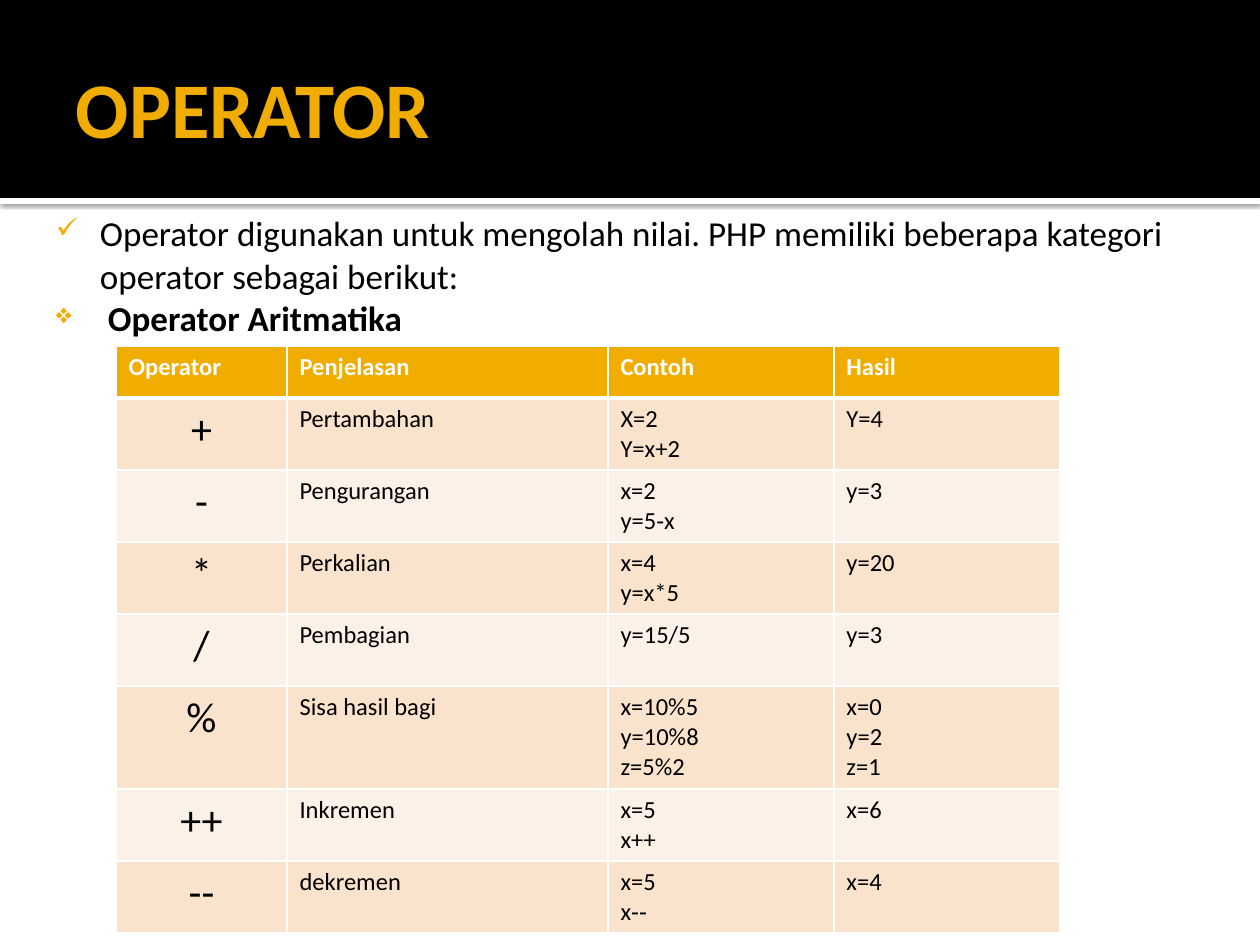
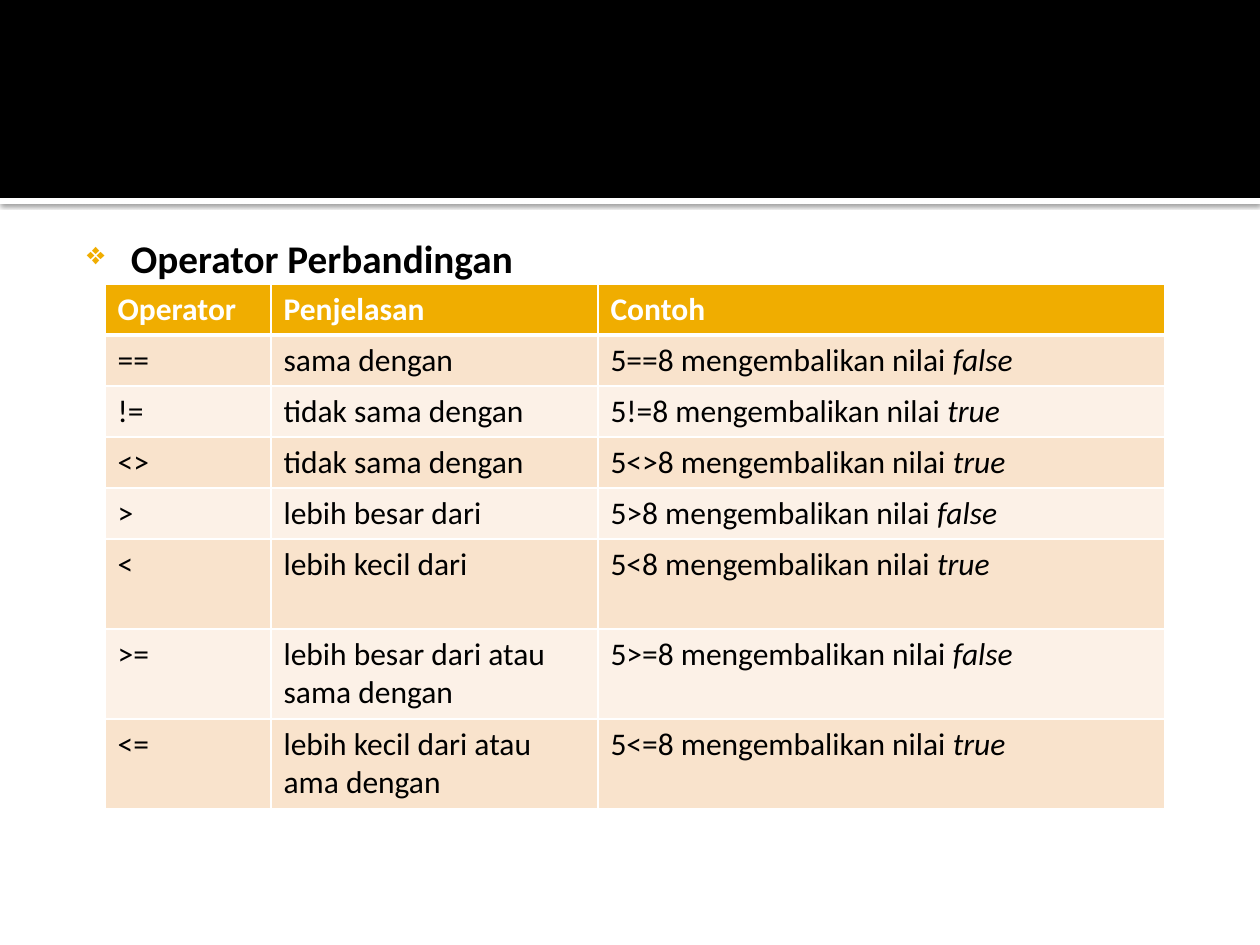
from lxml.etree import SubElement
from pptx import Presentation
from pptx.dml.color import RGBColor
from pptx.enum.shapes import MSO_SHAPE as Shape
from pptx.enum.text import MSO_ANCHOR as Anchor, PP_ALIGN as Align
from pptx.oxml import parse_xml
from pptx.oxml.ns import nsdecls, qn
from pptx.util import Pt

PX = 7257.14  # EMU in one px, 126 px to the inch
FONT = "Calibri"
GOLD, BLACK, WHITE = "F0AD00", "000000", "FFFFFF"
ROW_FILLS = ["F9E3CC", "FCF1E7"]

TITLE = "OPERATOR"
INTRO = ("Operator digunakan untuk mengolah nilai. PHP memiliki beberapa "
         "kategori operator sebagai berikut:")
ARITHMETIC_HEADING = " Operator Aritmatika"
ARITHMETIC = [
    ["Operator", "Penjelasan", "Contoh", "Hasil"],
    ["+", "Pertambahan", "X=2\nY=x+2", "Y=4"],
    ["-", "Pengurangan", "x=2\ny=5‐x", "y=3"],
    ["*", "Perkalian", "x=4\ny=x*5", "y=20"],
    ["/", "Pembagian", "y=15/5", "y=3"],
    ["%", "Sisa hasil bagi", "x=10%5\ny=10%8\nz=5%2", "x=0\ny=2\nz=1"],
    ["++", "Inkremen", "x=5\nx++", "x=6"],
    ["--", "dekremen", "x=5\nx‐‐", "x=4"],
]
ARITHMETIC_COLUMNS = [171, 321, 226, 226]
ARITHMETIC_ROWS = [52] + [72] * 4 + [103] + [72] * 2

COMPARISON_HEADING = "Operator Perbandingan"
COMPARISON_HEADER = ["Operator", "Penjelasan", "Contoh"]
COMPARISONS = [
    ("==", "sama dengan", "false"),
    ("!=", "tidak sama dengan", "true"),
    ("<>", "tidak sama dengan", "true"),
    (">", "lebih besar dari", "false"),
    ("<", "lebih kecil dari", "true"),
    (">=", "lebih besar dari atau\nsama dengan", "false"),
    ("<=", "lebih kecil dari atau\nama dengan", "true"),
]
COMPARISON_COLUMNS = [166, 327, 567]
COMPARISON_ROWS = [51] * 5 + [90] * 3


def px(length):
    return round(length * PX)


def color(hex_string):
    return RGBColor.from_string(hex_string)


def add_span(para, text, size, fill, bold=False, italic=False):
    span = para.add_run()
    span.text = text
    font = span.font
    font.name, font.size, font.bold, font.italic = FONT, Pt(size), bold, italic
    font.color.rgb = color(fill)


def set_insets(frame, left, top, right, bottom):
    frame.margin_left, frame.margin_top = px(left), px(top)
    frame.margin_right, frame.margin_bottom = px(right), px(bottom)


def add_bands(slide):
    """Draw the black header and the white strip under it, behind all else."""
    for top, height, fill in [(0, 198, BLACK), (198, 6, WHITE)]:
        band = slide.shapes.add_shape(Shape.RECTANGLE, 0, px(top), px(1260), px(height))
        band.shadow.inherit = False
        band.fill.solid()
        band.fill.fore_color.rgb = color(fill)
        band.line.fill.background()
        slide.shapes._spTree.insert(2, band._element)
    # the strip was drawn last, so it still is in "band"
    effects = band._element.spPr.find(qn("a:effectLst"))
    effects.append(parse_xml(
        f'<a:outerShdw {nsdecls("a")} blurRad="{Pt(2.5)}" dist="{Pt(0.8)}" dir="5400000" '
        f'rotWithShape="0"><a:srgbClr val="{BLACK}"><a:alpha val="60000"/></a:srgbClr>'
        '</a:outerShdw>'))


def set_title(slide, text):
    title = slide.shapes.title
    title.left, title.top, title.width, title.height = map(px, (63, 21, 1134, 173))
    frame = title.text_frame
    set_insets(frame, 13, 6, 6, 6)
    frame.vertical_anchor = Anchor.MIDDLE
    para = frame.paragraphs[0]
    para.alignment = Align.LEFT
    add_span(para, text, 45, GOLD, bold=True)


def set_bullet(para, mark):
    props = para._p.get_or_add_pPr()
    props.set("marL", str(px(60)))
    props.set("indent", str(px(-44)))
    bullet_color = SubElement(props, qn("a:buClr"))
    SubElement(bullet_color, qn("a:srgbClr"), val=GOLD)
    SubElement(props, qn("a:buSzPct"), val="80000")
    SubElement(props, qn("a:buChar"), char=mark)


def add_bullets(slide, place, items, size):
    """Items are (mark, text, bold)."""
    frame = slide.shapes.add_textbox(*map(px, place)).text_frame
    frame.word_wrap = True
    set_insets(frame, 8, 13, 13, 6)
    for index, (mark, text, bold) in enumerate(items):
        para = frame.add_paragraph() if index else frame.paragraphs[0]
        set_bullet(para, mark)
        add_span(para, text, size, BLACK, bold)


def set_borders(cell, top, bottom):
    props = cell._tc.get_or_add_tcPr()
    for index, (side, width) in enumerate([("L", 1), ("R", 1), ("T", top), ("B", bottom)]):
        props.insert(index, parse_xml(
            f'<a:ln{side} {nsdecls("a")} w="{Pt(width)}"><a:solidFill>'
            f'<a:srgbClr val="{WHITE}"/></a:solidFill></a:ln{side}>'))


def fill_cell(cell, content, size, text_color, bold, alignment):
    """Content is a string, or a (plain, italic) pair."""
    plain, italic = content if isinstance(content, tuple) else (content, "")
    frame = cell.text_frame
    for index, line in enumerate(plain.split("\n")):
        para = frame.add_paragraph() if index else frame.paragraphs[0]
        para.alignment = alignment
        add_span(para, line, size, text_color, bold)
    if italic:
        add_span(para, italic, size, text_color, italic=True)


def add_grid(slide, left, top, columns, heights, rows, size, symbol_size=None):
    """Symbol size, if given, centres the first column below the header."""
    table = slide.shapes.add_table(
        len(rows), len(columns), px(left), px(top), px(sum(columns)), px(sum(heights))).table
    for column, width in zip(table.columns, columns):
        column.width = px(width)
    for r, (row, height) in enumerate(zip(rows, heights)):
        table.rows[r].height = px(height)
        header = r == 0
        for c, content in enumerate(row):
            cell = table.cell(r, c)
            cell.fill.solid()
            cell.fill.fore_color.rgb = color(GOLD if header else ROW_FILLS[(r - 1) % 2])
            set_borders(cell, 3 if r == 1 else 1, 3 if header else 1)
            symbol = symbol_size and c == 0 and not header
            fill_cell(cell, content, symbol_size if symbol else size,
                      WHITE if header else BLACK, header,
                      Align.CENTER if symbol else Align.LEFT)


def main():
    deck = Presentation()
    deck.slide_width, deck.slide_height = px(1260), px(945)
    title_only, blank = deck.slide_layouts[5], deck.slide_layouts[6]

    arithmetic = deck.slides.add_slide(title_only)
    add_bands(arithmetic)
    set_title(arithmetic, TITLE)
    add_bullets(arithmetic, (32, 199, 1197, 136),
                [("✓", INTRO, False), ("❖", ARITHMETIC_HEADING, True)], 20)
    add_grid(arithmetic, 116, 346, ARITHMETIC_COLUMNS, ARITHMETIC_ROWS,
             ARITHMETIC, 14, symbol_size=24)

    comparison = deck.slides.add_slide(blank)
    add_bands(comparison)
    add_bullets(comparison, (63, 221, 1134, 95), [("❖", COMPARISON_HEADING, True)], 22.4)
    rows = [COMPARISON_HEADER] + [
        [sign, meaning, (f"5{sign}8 mengembalikan nilai ", result)]
        for sign, meaning, result in COMPARISONS]
    add_grid(comparison, 105, 284, COMPARISON_COLUMNS, COMPARISON_ROWS, rows, 18)

    deck.save("out.pptx")


if __name__ == "__main__":
    main()
